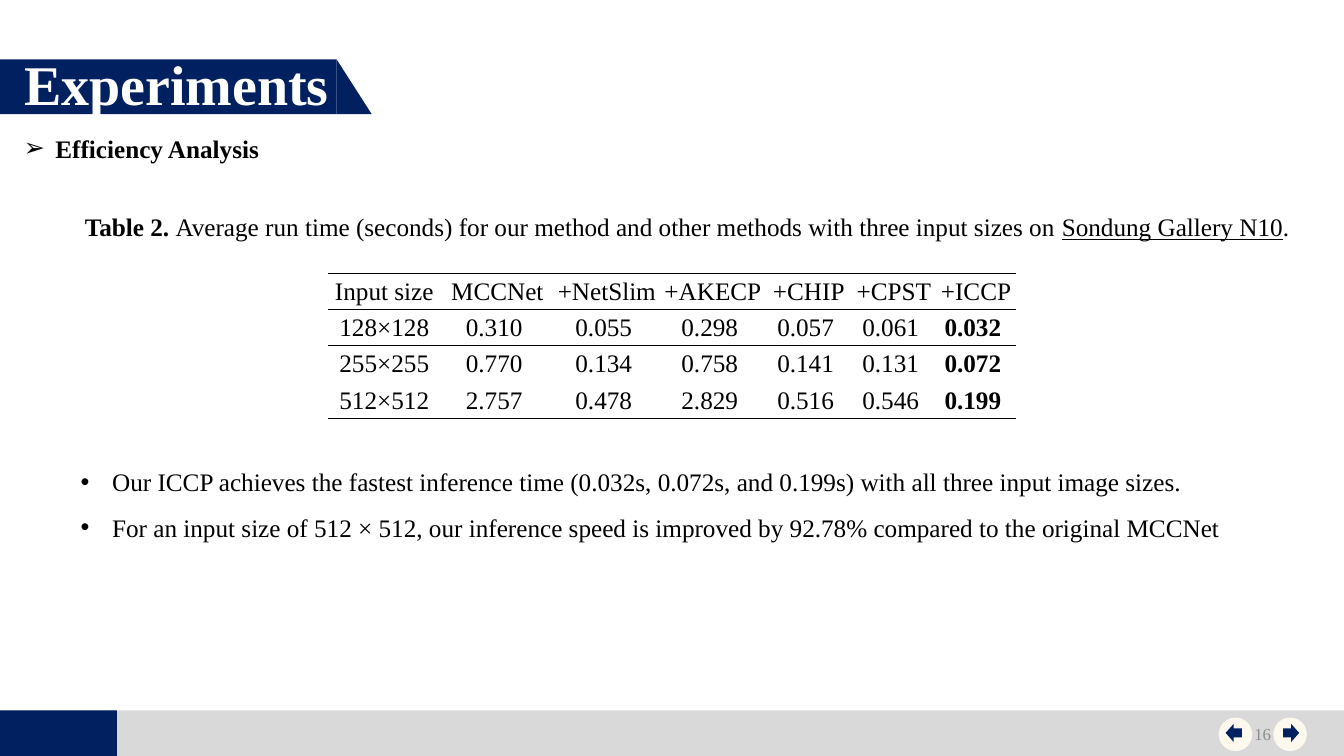
from dataclasses import dataclass

from lxml.etree import SubElement
from pptx import Presentation
from pptx.dml.color import RGBColor
from pptx.enum.shapes import MSO_SHAPE
from pptx.enum.text import MSO_ANCHOR, PP_ALIGN
from pptx.oxml.ns import qn
from pptx.util import Pt


@dataclass(frozen=True)
class Theme:
    font: str = "Times New Roman"
    navy: str = "002060"
    gray: str = "D9D9D9"
    cream: str = "FCF8ED"
    number: str = "8C8C8C"
    black: str = "000000"
    white: str = "FFFFFF"
    title_size: int = 40
    body_size: int = 18
    number_size: int = 12
    rule_width: float = 0.5
    indent: float = 22.5


THEME = Theme()
NO_STYLE_NO_GRID = "{2D5ABB26-0587-4C30-8999-92F81FD0307C}"

METHODS = ["Input size", "MCCNet", "+NetSlim", "+AKECP", "+CHIP", "+CPST", "+ICCP"]
RUN_TIMES = {
    "128×128": [0.310, 0.055, 0.298, 0.057, 0.061, 0.032],
    "255×255": [0.770, 0.134, 0.758, 0.141, 0.131, 0.072],
    "512×512": [2.757, 0.478, 2.829, 0.516, 0.546, 0.199],
}
COLUMN_WIDTHS = [80, 81.5, 75, 76.5, 60.5, 61, 56.5]
FINDINGS = [
    "Our ICCP achieves the fastest inference time (0.032s, 0.072s, and 0.199s) "
    "with all three input image sizes.",
    "For an input size of 512 × 512, our inference speed is improved by 92.78% "
    "compared to the original MCCNet",
]


def add_run(paragraph, text, size=THEME.body_size, color=THEME.black,
            bold=False, underline=False):
    run = paragraph.add_run()
    run.text = text
    font = run.font
    font.name = THEME.font
    font.size = Pt(size)
    font.bold = bold
    font.underline = underline
    font.color.rgb = RGBColor.from_string(color)


def add_filled_shape(slide, kind, left, top, width, height, color):
    shape = slide.shapes.add_shape(kind, Pt(left), Pt(top), Pt(width), Pt(height))
    shape.shadow.inherit = False
    shape.fill.solid()
    shape.fill.fore_color.rgb = RGBColor.from_string(color)
    shape.line.fill.background()


def add_text_frame(slide, left, top, width, height):
    box = slide.shapes.add_textbox(Pt(left), Pt(top), Pt(width), Pt(height))
    box.text_frame.word_wrap = True
    return box.text_frame


def set_bullet(paragraph, character):
    """Give the paragraph a hanging bullet; call after setting its spacing."""
    properties = paragraph._p.get_or_add_pPr()
    properties.set("marL", str(Pt(THEME.indent)))
    properties.set("indent", str(-Pt(THEME.indent)))
    SubElement(properties, qn("a:buFont")).set("typeface", "Arial")
    SubElement(properties, qn("a:buChar")).set("char", character)


def add_cell_rule(cell, side):
    """Draw a thin rule on one side of the cell, lnT or lnB."""
    line = SubElement(cell._tc.get_or_add_tcPr(), qn(f"a:{side}"))
    line.set("w", str(Pt(THEME.rule_width)))
    fill = SubElement(line, qn("a:solidFill"))
    SubElement(fill, qn("a:srgbClr")).set("val", THEME.black)


def build_footer(slide, left, top, width, height):
    bar = MSO_SHAPE.RECTANGLE
    add_filled_shape(slide, bar, left, top, width, height, THEME.gray)
    add_filled_shape(slide, bar, left, top, 83.5, height, THEME.navy)

    diameter, arrow_width, arrow_height = 24, 11.5, 13
    button_top = top + 5
    buttons = [
        (left + 870.5, MSO_SHAPE.LEFT_ARROW, 5),
        (left + 909.5, MSO_SHAPE.RIGHT_ARROW, 7),
    ]
    for button_left, arrow, inset in buttons:
        add_filled_shape(slide, MSO_SHAPE.OVAL, button_left, button_top,
                         diameter, diameter, THEME.cream)
        add_filled_shape(slide, arrow, button_left + inset,
                         button_top + (diameter - arrow_height) / 2 - 1,
                         arrow_width, arrow_height, THEME.navy)

    frame = add_text_frame(slide, left + 699, top + 2, 216, 29)
    frame.vertical_anchor = MSO_ANCHOR.MIDDLE
    paragraph = frame.paragraphs[0]
    paragraph.alignment = PP_ALIGN.RIGHT
    add_run(paragraph, "16", THEME.number_size, THEME.number)


def build_title_banner(slide, left, top, width, height):
    tip = 25
    body = width - tip
    add_filled_shape(slide, MSO_SHAPE.RECTANGLE, left, top, body, height, THEME.navy)
    add_filled_shape(slide, MSO_SHAPE.RIGHT_TRIANGLE, left + body, top, tip, height,
                     THEME.navy)

    title = slide.shapes.title
    title.left, title.top = Pt(left + 10), Pt(top - 11)
    title.width, title.height = Pt(width), Pt(55.5)
    frame = title.text_frame
    frame.vertical_anchor = MSO_ANCHOR.TOP
    paragraph = frame.paragraphs[0]
    paragraph.alignment = PP_ALIGN.LEFT
    add_run(paragraph, "Experiments", THEME.title_size, THEME.white, bold=True)
    slide.shapes._spTree.append(title._element)  # bring in front of the banner


def build_section_heading(slide, left, top, width, height):
    paragraph = add_text_frame(slide, left, top, width, height).paragraphs[0]
    set_bullet(paragraph, "➢")
    add_run(paragraph, "Efficiency Analysis", bold=True)


def build_caption(slide, left, top, width, height):
    paragraph = add_text_frame(slide, left, top, width, height).paragraphs[0]
    add_run(paragraph, "Table 2. ", bold=True)
    add_run(paragraph, "Average run time (seconds) for our method and other methods "
                       "with three input sizes on ")
    add_run(paragraph, "Sondung Gallery N10", underline=True)
    add_run(paragraph, ".")


def build_run_time_table(slide, left, top, width, height):
    # The space after each value sets the numbers slightly left of centre.
    rows = [METHODS] + [
        [size] + [f"{value:.3f} " for value in values]
        for size, values in RUN_TIMES.items()
    ]
    table = slide.shapes.add_table(len(rows), len(METHODS), Pt(left), Pt(top),
                                   Pt(width), Pt(height)).table
    table.first_row = table.horz_banding = False
    table._tbl.tblPr.find(qn("a:tableStyleId")).text = NO_STYLE_NO_GRID
    for column, column_width in zip(table.columns, COLUMN_WIDTHS):
        column.width = Pt(column_width)

    last_row, last_column = len(rows) - 1, len(METHODS) - 1
    for r, texts in enumerate(rows):
        for c, text in enumerate(texts):
            cell = table.cell(r, c)
            cell.margin_left = cell.margin_right = cell.margin_top = Pt(0.7)
            cell.margin_bottom = 0
            cell.vertical_anchor = MSO_ANCHOR.MIDDLE
            paragraph = cell.text_frame.paragraphs[0]
            paragraph.alignment = PP_ALIGN.CENTER
            add_run(paragraph, text, bold=r > 0 and c == last_column)
            if r <= 1:
                add_cell_rule(cell, "lnT")
            if r in (0, last_row):
                add_cell_rule(cell, "lnB")
            cell.fill.background()


def build_findings(slide, left, top, width, height):
    frame = add_text_frame(slide, left, top, width, height)
    for index, finding in enumerate(FINDINGS):
        paragraph = frame.add_paragraph() if index else frame.paragraphs[0]
        paragraph.line_spacing = 1.5
        set_bullet(paragraph, "•")
        add_run(paragraph, finding)


def main():
    presentation = Presentation()
    presentation.slide_width, presentation.slide_height = Pt(960), Pt(540)
    slide = presentation.slides.add_slide(presentation.slide_layouts[5])
    build_footer(slide, 0, 507.5, 960, 32.5)
    build_title_banner(slide, 0, 42.5, 265.5, 39)
    build_section_heading(slide, 10, 91.5, 194.5, 29)
    build_run_time_table(slide, 234.5, 195, sum(COLUMN_WIDTHS), 104)
    build_caption(slide, 53.5, 147.5, 920, 29)
    build_findings(slide, 50.5, 319, 859, 68.5)
    presentation.save("out.pptx")


if __name__ == "__main__":
    main()
